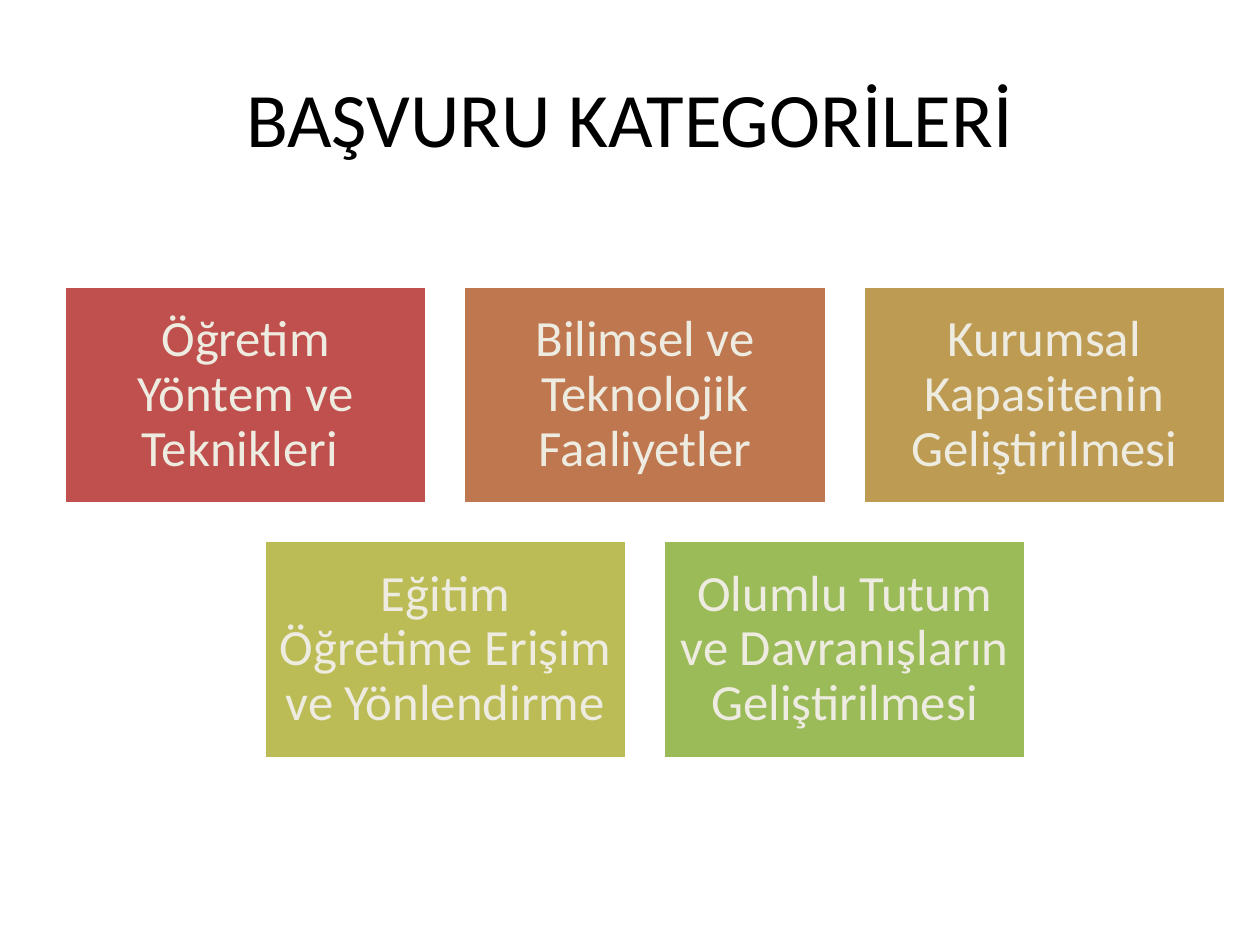
from pptx import Presentation
from pptx.dml.color import RGBColor as Rgb
from pptx.enum.shapes import MSO_SHAPE as Kind
from pptx.enum.text import MSO_ANCHOR as Anchor, PP_ALIGN as Align
from pptx.util import Inches, Pt

COLORS = {
    "title": "000000",
    "label": "EEECE1",
    "edge": "FFFFFF",
    "red": "C0504D",
    "rust": "BF7750",
    "gold": "BD9B53",
    "olive": "BCBC56",
    "green": "9BBB59",
}
ROWS = [
    [
        ("Öğretim Yöntem ve Teknikleri ", "red"),
        ("Bilimsel ve Teknolojik Faaliyetler", "rust"),
        ("Kurumsal Kapasitenin Geliştirilmesi", "gold"),
    ],
    [
        ("Eğitim Öğretime Erişim ve Yönlendirme", "olive"),
        ("Olumlu Tutum ve Davranışların Geliştirilmesi", "green"),
    ],
]
WIDTH, HEIGHT, GAP = 2.88, 1.73, 0.29
CENTER, TOP = 5.12, 2.27


def shade(name):
    """Return the named color."""
    return Rgb.from_string(COLORS[name])


def write(frame, text, size, color, inset=None, spacing=None):
    """Put centered text into a frame."""
    frame.word_wrap = True
    frame.vertical_anchor = Anchor.MIDDLE
    if inset is not None:
        frame.margin_left = frame.margin_right = Inches(inset)
        frame.margin_top = frame.margin_bottom = Inches(inset)
    para = frame.paragraphs[0]
    para.alignment = Align.CENTER
    para.line_spacing = spacing
    run = para.add_run()
    run.text = text
    run.font.name = "Calibri"
    run.font.size = Pt(size)
    run.font.color.rgb = shade(color)


class Painter:
    """Hold the style and the current slide."""

    def __init__(self, slide):
        """Keep the slide to draw on."""
        self.shapes = slide.shapes

    def title(self, text):
        """Add the heading."""
        box = self.shapes.add_textbox(Inches(0.5), Inches(0.3), Inches(9), Inches(1.25))
        write(box.text_frame, text, size=44, color="title")

    def tile(self, left, top, text, color):
        """Add one category tile."""
        tile = self.shapes.add_shape(
            Kind.RECTANGLE, Inches(left), Inches(top), Inches(WIDTH), Inches(HEIGHT)
        )
        tile.shadow.inherit = False
        tile.fill.solid()
        tile.fill.fore_color.rgb = shade(color)
        tile.line.color.rgb = shade("edge")
        tile.line.width = Pt(2)
        write(tile.text_frame, text, size=29, color="label", inset=0.12, spacing=0.9)

    def grid(self, rows):
        """Add rows of tiles, each centered on the same axis."""
        for i, row in enumerate(rows):
            span = len(row) * (WIDTH + GAP) - GAP
            for j, (text, color) in enumerate(row):
                left = CENTER - span / 2 + j * (WIDTH + GAP)
                self.tile(left, TOP + i * (HEIGHT + GAP), text, color)


def main():
    """Build and save the slide."""
    deck = Presentation()
    deck.slide_width, deck.slide_height = Inches(10), Inches(7.5)
    painter = Painter(deck.slides.add_slide(deck.slide_layouts[6]))
    painter.title("BAŞVURU KATEGORİLERİ")
    painter.grid(ROWS)
    deck.save("out.pptx")


if __name__ == "__main__":
    main()
